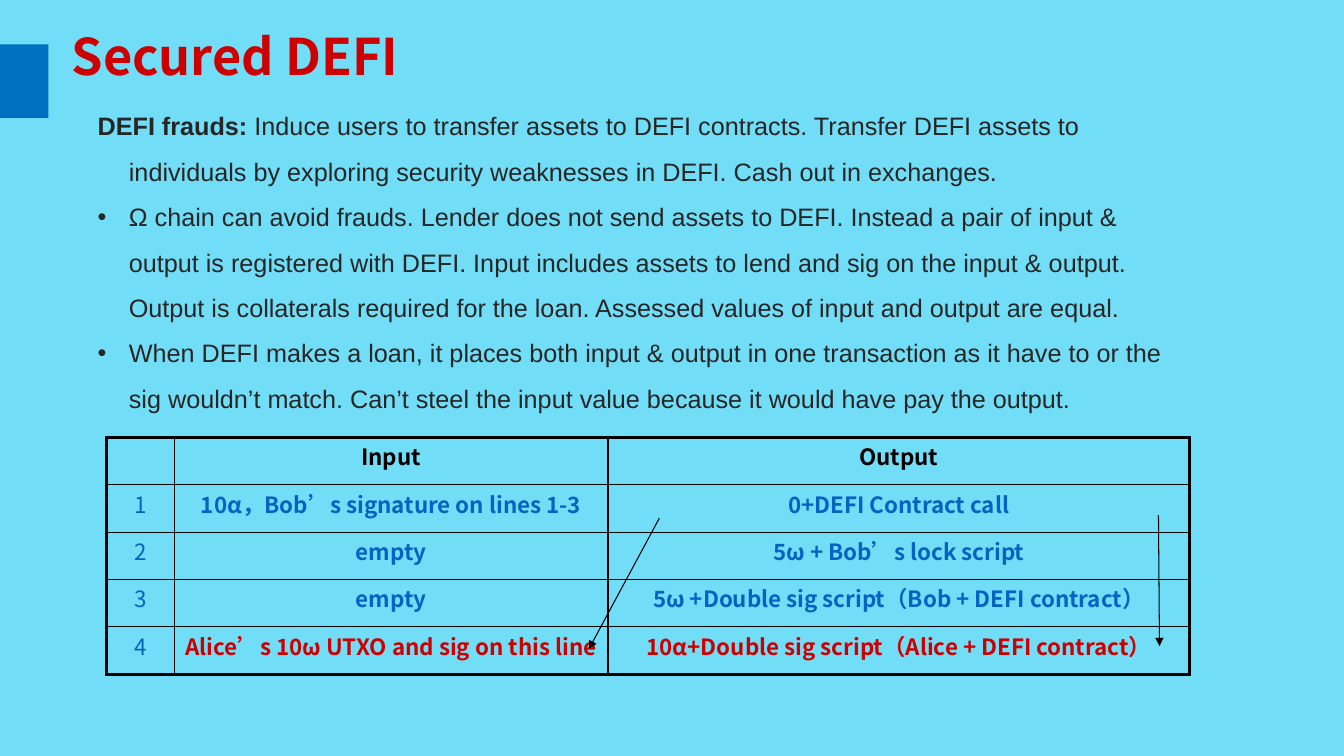
"""Build the Secured DEFI slide."""
import dataclasses

import lxml.etree
import pptx
import pptx.dml.color
import pptx.enum.shapes
import pptx.enum.text
import pptx.oxml.ns
import pptx.util

SCALE = 9144
SKY = pptx.dml.color.RGBColor(0x72, 0xDD, 0xF6)
BLUE = pptx.dml.color.RGBColor(0x00, 0x70, 0xC0)
LINK_BLUE = pptx.dml.color.RGBColor(0x05, 0x63, 0xC1)
RED = pptx.dml.color.RGBColor(0xCC, 0x00, 0x00)
INK = pptx.dml.color.RGBColor(0x26, 0x26, 0x26)
BLACK = pptx.dml.color.RGBColor(0x00, 0x00, 0x00)
SANS = "Noto Sans CJK SC"
COLUMN_WIDTHS = (67, 430, 577)
ROW_HEIGHT = 47


@dataclasses.dataclass(frozen=True)
class Span:
    text: str
    bold: bool = False


@dataclasses.dataclass(frozen=True)
class Item:
    spans: tuple[Span, ...]
    bulleted: bool = True


@dataclasses.dataclass(frozen=True)
class Row:
    number: str
    input: str
    output: str
    color: pptx.dml.color.RGBColor = LINK_BLUE


@dataclasses.dataclass(frozen=True)
class Arrow:
    start: tuple[int, int]
    end: tuple[int, int]


ITEMS = (
    Item((Span("DEFI frauds: ", True),
          Span("Induce users to transfer assets to DEFI contracts. Transfer DEFI assets to "
               "individuals by exploring security weaknesses in DEFI. Cash out in exchanges.")),
         bulleted=False),
    Item((Span("Ω chain can avoid frauds. Lender does not send assets to DEFI. Instead a pair of "
               "input & output is registered with DEFI. Input includes assets to lend and sig on "
               "the input & output. Output is collaterals required for the loan. Assessed values "
               "of input and output are equal."),)),
    Item((Span("When DEFI makes a loan, it places both input & output in one transaction as it "
               "have to or the sig wouldn’t match. Can’t steel the input value because it would "
               "have pay the output."),)),
)
ROWS = (
    Row("", "Input", "Output", BLACK),
    Row("1", "10α，Bob’s signature on lines 1-3", "0+DEFI Contract call"),
    Row("2", "empty", "5ω + Bob’s lock script"),
    Row("3", "empty", "5ω +Double sig script（Bob + DEFI contract）"),
    Row("4", "Alice’s 10ω UTXO and sig on this line",
        "10α+Double sig script（Alice + DEFI contract）", RED),
)
ARROWS = (Arrow((654, 514), (584, 644)), Arrow((1149, 511), (1150, 641)))


def px(*lengths: int) -> list[pptx.util.Emu]:
    return [pptx.util.Emu(length * SCALE) for length in lengths]


def child(parent, tag: str, **attributes: str):
    return lxml.etree.SubElement(parent, pptx.oxml.ns.qn(tag), attributes)


def add_span(para, span: Span, size: int, font: str, color: pptx.dml.color.RGBColor) -> None:
    run = para.add_run()
    run.text = span.text
    run.font.size = pptx.util.Pt(size)
    run.font.name = font
    run.font.bold = span.bold
    run.font.color.rgb = color
    child(run.font._element, "a:ea", typeface=font)


def add_title(slide) -> None:
    title = slide.shapes.title
    title.left, title.top, title.width, title.height = px(61, 29, 677, 70)
    frame = title.text_frame
    frame.auto_size = pptx.enum.text.MSO_AUTO_SIZE.NONE
    frame.vertical_anchor = pptx.enum.text.MSO_ANCHOR.TOP
    frame.margin_top = 0
    para = frame.paragraphs[0]
    para.alignment = pptx.enum.text.PP_ALIGN.LEFT
    para.line_spacing = 0.95
    add_span(para, Span("Secured DEFI", True), 36, SANS, RED)


def add_block(slide) -> None:
    block = slide.shapes.add_shape(pptx.enum.shapes.MSO_SHAPE.RECTANGLE, *px(0, 44, 48, 73))
    block.shadow.inherit = False
    block.fill.solid()
    block.fill.fore_color.rgb = BLUE
    block.line.fill.background()


def add_body(slide) -> None:
    frame = slide.shapes.add_textbox(*px(87, 90, 1082, 326)).text_frame
    frame.word_wrap = True
    for index, item in enumerate(ITEMS):
        para = frame.add_paragraph() if index else frame.paragraphs[0]
        para.line_spacing = 1.5
        properties = para._p.get_or_add_pPr()
        properties.set("marL", str(31 * SCALE))
        properties.set("indent", str(-31 * SCALE))
        if item.bulleted:
            child(properties, "a:buFont", typeface="Arial")
            child(properties, "a:buChar", char="•")
        for span in item.spans:
            add_span(para, span, 18, "Arial", INK)


def set_borders(cell, row: int, column: int) -> None:
    outer_sides = {
        "a:lnL": column == 0,
        "a:lnR": column == len(COLUMN_WIDTHS) - 1,
        "a:lnT": row == 0,
        "a:lnB": row == len(ROWS) - 1,
    }
    properties = cell._tc.get_or_add_tcPr()
    for position, (tag, outer) in enumerate(outer_sides.items()):
        width = pptx.util.Pt(2.25 if outer else 1)
        border = child(properties, tag, w=str(width))
        child(child(border, "a:solidFill"), "a:srgbClr", val=str(BLACK))
        properties.insert(position, border)


def add_ledger(slide) -> None:
    table = slide.shapes.add_table(
        len(ROWS), len(COLUMN_WIDTHS),
        *px(106, 434, sum(COLUMN_WIDTHS), ROW_HEIGHT * len(ROWS))).table
    table.first_row = table.horz_banding = False
    for column, width in zip(table.columns, px(*COLUMN_WIDTHS)):
        column.width = width
    for row_index, row in enumerate(ROWS):
        for column_index, text in enumerate((row.number, row.input, row.output)):
            cell = table.cell(row_index, column_index)
            cell.fill.background()
            set_borders(cell, row_index, column_index)
            if text:
                para = cell.text_frame.paragraphs[0]
                para.alignment = pptx.enum.text.PP_ALIGN.CENTER
                para.line_spacing = 0.9
                para.space_before = pptx.util.Pt(10)
                numbered = column_index == 0
                add_span(para, Span(text, not numbered), 16, SANS,
                         LINK_BLUE if numbered else row.color)


def add_arrow(slide, arrow: Arrow) -> None:
    line = slide.shapes.add_connector(
        pptx.enum.shapes.MSO_CONNECTOR.STRAIGHT, *px(*arrow.start, *arrow.end))
    line.line.width = pptx.util.Pt(0.75)
    line.line.color.rgb = BLACK
    child(line.line._get_or_add_ln(), "a:tailEnd", type="triangle")
    child(line._element.spPr, "a:effectLst")


def main() -> None:
    deck = pptx.Presentation()
    deck.slide_width, deck.slide_height = px(1333, 750)
    page = deck.slides.add_slide(deck.slide_layouts.get_by_name("Title Only"))
    page.background.fill.solid()
    page.background.fill.fore_color.rgb = SKY
    add_block(page)
    add_title(page)
    add_body(page)
    add_ledger(page)
    for arrow in ARROWS:
        add_arrow(page, arrow)
    deck.save("out.pptx")


if __name__ == "__main__":
    main()
